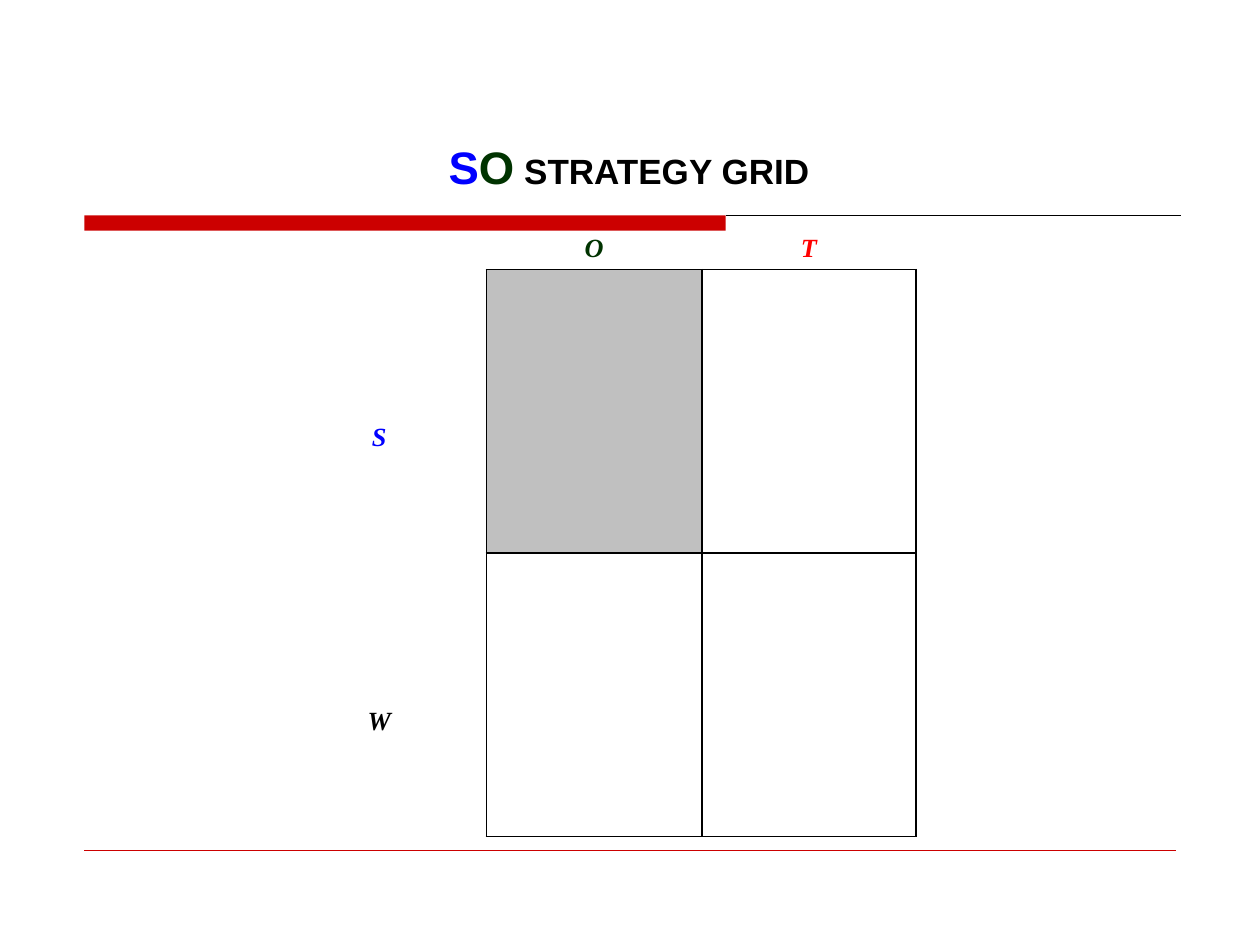
from lxml import etree
from pptx import Presentation
from pptx.dml.color import RGBColor
from pptx.enum.shapes import MSO_CONNECTOR, MSO_SHAPE
from pptx.enum.text import MSO_ANCHOR, PP_ALIGN
from pptx.oxml.ns import qn
from pptx.util import Inches, Pt

RECTANGLE = MSO_SHAPE.RECTANGLE
STRAIGHT = MSO_CONNECTOR.STRAIGHT
MIDDLE, BOTTOM = MSO_ANCHOR.MIDDLE, MSO_ANCHOR.BOTTOM
CENTER = PP_ALIGN.CENTER

RED = RGBColor(0xCC, 0x00, 0x00)
BRIGHT_RED = RGBColor(0xFF, 0x00, 0x00)
BLUE = RGBColor(0x00, 0x00, 0xFF)
GREEN = RGBColor(0x00, 0x33, 0x00)
BLACK = RGBColor(0x00, 0x00, 0x00)
GREY = RGBColor(0xC0, 0xC0, 0xC0)

MARGIN, RULE_TOP = 0.67, 1.71
BAR_WIDTH, BAR_HEIGHT = 5.09, 0.12
GRID_LEFT, GRID_TOP = 2.16, 1.39
COLUMN_WIDTHS = (1.7, 1.71, 1.7)
ROW_HEIGHT, ROW_COUNT, QUADRANT_ROWS = 0.75, 7, 3
LABELS = {
    (0, 1): ("O", GREEN),
    (0, 2): ("T", BRIGHT_RED),
    (2, 0): ("S", BLUE),
    (5, 0): ("W", BLACK),
}
TITLE_RUNS = (
    ("S", 26, BLUE),
    ("O", 26, GREEN),
    (" ", 20, GREEN),
    ("STRATEGY GRID", 20, BLACK),
)


def add_rule(slide, left, right, top, color, width):
    """Draw a horizontal rule without a shadow."""
    rule = slide.shapes.add_connector(
        STRAIGHT, Inches(left), Inches(top), Inches(right), Inches(top))
    rule.line.color.rgb = color
    rule.line.width = Pt(width)
    etree.SubElement(rule._element.spPr, qn("a:effectLst"))


def add_bar(slide):
    """Draw the solid bar that starts the heading rule."""
    bar = slide.shapes.add_shape(
        RECTANGLE, Inches(MARGIN), Inches(RULE_TOP),
        Inches(BAR_WIDTH), Inches(BAR_HEIGHT))
    bar.shadow.inherit = False
    bar.fill.solid()
    bar.fill.fore_color.rgb = RED
    bar.line.fill.background()


def add_title(slide):
    """Write the heading with its coloured initials."""
    frame = slide.shapes.add_textbox(
        Inches(2.56), Inches(-0.15), Inches(4.89), Inches(3.23)).text_frame
    frame.word_wrap = False
    frame.vertical_anchor = MIDDLE
    frame.margin_left = frame.margin_right = Inches(1)
    frame.margin_top, frame.margin_bottom = Inches(1.25), Inches(1.54)
    heading = frame.paragraphs[0]
    heading.font.name = "Arial"
    heading.font.bold = True
    for text, size, color in TITLE_RUNS:
        run = heading.add_run()
        run.text = text
        run.font.size = Pt(size)
        run.font.color.rgb = color


def set_borders(cell, drawn):
    """Draw the named sides of a cell in black and hide the others."""
    properties = cell._tc.get_or_add_tcPr()
    for position, side in enumerate("LRTB"):
        border = etree.Element(qn(f"a:ln{side}"), w=str(Pt(1)))
        if side in drawn:
            fill = etree.SubElement(border, qn("a:solidFill"))
            etree.SubElement(fill, qn("a:srgbClr"), val=str(BLACK))
        else:
            etree.SubElement(border, qn("a:noFill"))
        properties.insert(position, border)


def border_sides(row, column):
    """Return the sides to draw so that each quadrant is outlined."""
    if row == 0:
        return "B" if column else ""
    if column == 0:
        return "R"
    step = (row - 1) % QUADRANT_ROWS
    return "LR" + {0: "T", QUADRANT_ROWS - 1: "B"}.get(step, "")


def write_label(cell, text, color):
    """Write an axis letter at the bottom centre of a cell."""
    cell.vertical_anchor = BOTTOM
    label = cell.text_frame.paragraphs[0]
    label.text = text
    label.alignment = CENTER
    label.font.name = "Times New Roman"
    label.font.size = Pt(15)
    label.font.bold = label.font.italic = True
    label.font.color.rgb = color


def add_strategy_grid(slide):
    """Build the two by two grid with its axis letters."""
    grid = slide.shapes.add_table(
        ROW_COUNT, len(COLUMN_WIDTHS), Inches(GRID_LEFT), Inches(GRID_TOP),
        Inches(sum(COLUMN_WIDTHS)), Inches(ROW_HEIGHT * ROW_COUNT)).table
    grid.first_row = grid.horz_banding = False
    for column, width in zip(grid.columns, COLUMN_WIDTHS):
        column.width = Inches(width)
    for row in range(ROW_COUNT):
        for column in range(len(COLUMN_WIDTHS)):
            cell = grid.cell(row, column)
            if column == 1 and 1 <= row <= QUADRANT_ROWS:
                cell.fill.solid()
                cell.fill.fore_color.rgb = GREY
            else:
                cell.fill.background()
            set_borders(cell, border_sides(row, column))
            if (row, column) in LABELS:
                write_label(cell, *LABELS[row, column])


def main():
    """Build and save the strategy grid slide."""
    deck = Presentation()
    deck.slide_width, deck.slide_height = Inches(10), Inches(7.5)
    slide = deck.slides.add_slide(deck.slide_layouts[6])
    add_bar(slide)
    add_rule(slide, MARGIN + BAR_WIDTH, 9.37, RULE_TOP, BLACK, 0.75)
    add_rule(slide, MARGIN, 9.33, 6.75, RED, 0.25)
    add_title(slide)
    add_strategy_grid(slide)
    deck.save("out.pptx")


if __name__ == "__main__":
    main()
